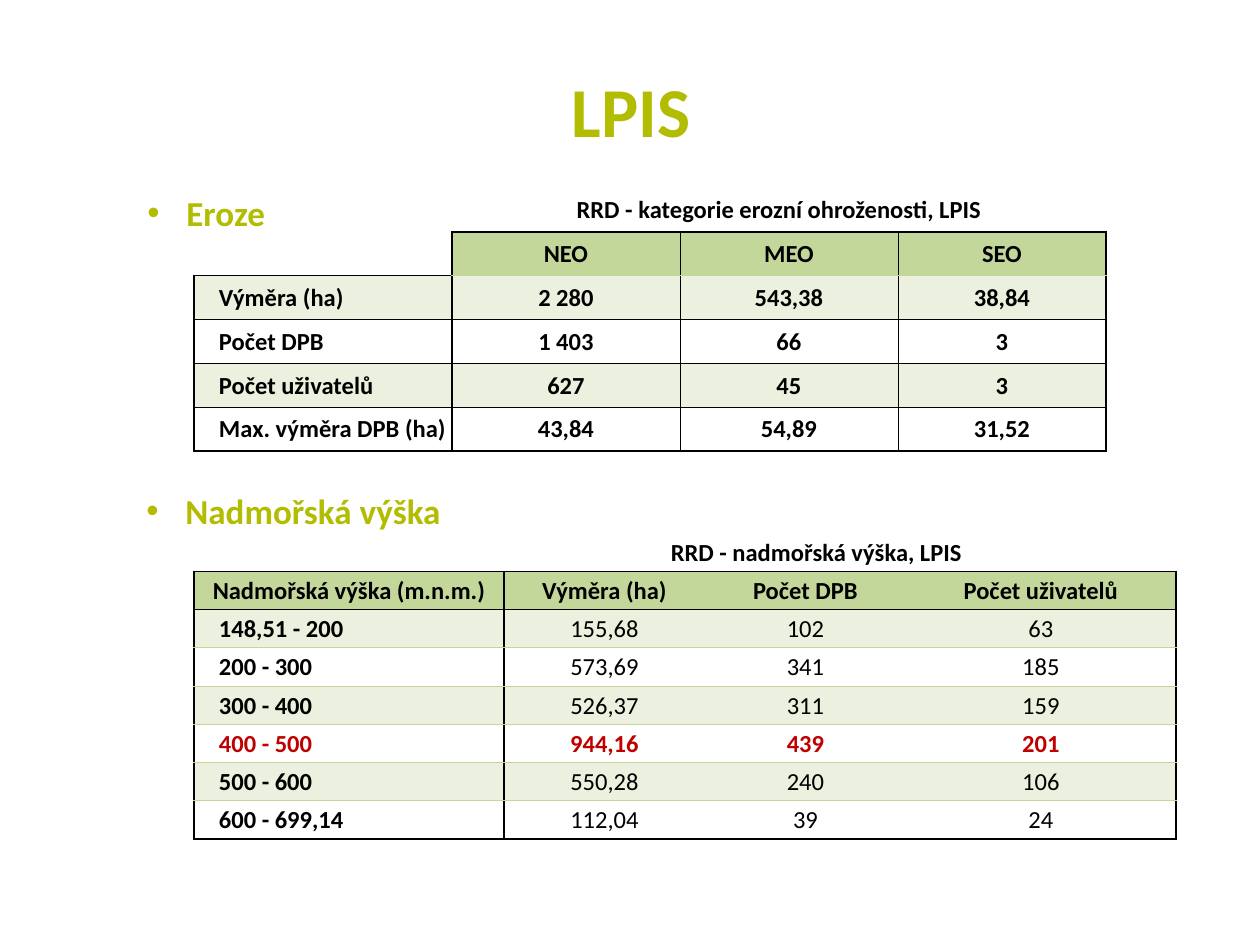
from pptx import Presentation
from pptx.dml.color import RGBColor
from pptx.enum.text import MSO_ANCHOR, MSO_AUTO_SIZE, PP_ALIGN
from pptx.oxml.ns import qn
from pptx.util import Pt
from lxml.etree import SubElement

# Content
TITLE = "LPIS"
HEADS = [("Eroze", (135, 185, 145, 55)), ("Nadmořská výška", (134, 483, 323, 55))]
TABLES = [
    dict(
        box=(194, 188, 263), cols=[258, 228, 218, 208],
        caption="RRD - kategorie erozní ohroženosti, LPIS",
        start=1, shift=1, bold=True, hot=None,
        under="soft", inner="thin", split="thin",
        rows=[
            ["", "NEO", "MEO", "SEO"],
            ["Výměra (ha)", "2 280", "543,38", "38,84"],
            ["Počet DPB", "1 403", "66", "3"],
            ["Počet uživatelů", "627", "45", "3"],
            ["Max. výměra DPB (ha)", "43,84", "54,89", "31,52"],
        ],
    ),
    dict(
        box=(194, 533, 306), cols=[310, 201, 201, 200],
        caption="RRD - nadmořská výška, LPIS",
        start=0, shift=264, bold=False, hot="400 - 500",
        under="thick", inner="soft", split=None,
        rows=[
            ["Nadmořská výška (m.n.m.)", "Výměra (ha)", "Počet DPB", "Počet uživatelů"],
            ["148,51 - 200", "155,68", "102", "63"],
            ["200 - 300", "573,69", "341", "185"],
            ["300 - 400", "526,37", "311", "159"],
            ["400 - 500", "944,16", "439", "201"],
            ["500 - 600", "550,28", "240", "106"],
            ["600 - 699,14", "112,04", "39", "24"],
        ],
    ),
]

# Theme
THEME = dict(
    font="Calibri", lime="B2BC00", black="000000", red="C00000",
    head="C4D79B", band="EBF1DE", title=40, bullet=20, cell=14,
)
LINES = dict(thick=("000000", 1), thin=("000000", 0.5), soft=("C4D79B", 0.5))
INDENT = 39


def px(n):
    return round(n * 914400 / 126)


def put(frame, text, size, color="black", bold=True, align=PP_ALIGN.LEFT, bullet=False):
    para = frame.paragraphs[0]
    para.alignment = align
    if bullet:
        props = para._p.get_or_add_pPr()
        props.set("marL", str(px(INDENT)))
        props.set("indent", str(-px(INDENT)))
        SubElement(props, qn("a:buFont")).set("typeface", "Arial")
        SubElement(props, qn("a:buChar")).set("char", "•")
    run = para.add_run()
    run.text = text
    font = run.font
    font.name, font.size, font.bold = THEME["font"], Pt(THEME[size]), bold
    font.color.rgb = RGBColor.from_string(THEME[color])


def edge(cell, lines):
    props = cell._tc.get_or_add_tcPr()
    for spot, (side, kind) in enumerate(lines.items()):
        line = SubElement(props, qn("a:ln" + side))
        props.insert(spot, line)
        if kind:
            color, width = LINES[kind]
            line.set("w", str(Pt(width)))
            fill = SubElement(line, qn("a:solidFill"))
            SubElement(fill, qn("a:srgbClr")).set("val", color)
        else:
            SubElement(line, qn("a:noFill"))


def level(data, row, col):
    """Line above the given row; row 0 is the caption."""
    last = len(data["rows"]) + 1
    if row == 0 or (row == 1 and not data["rows"][0][col]):
        return None
    if row in (1, last) or (row == 2 and col == 0):
        return "thick"
    return data["under"] if row == 2 else data["inner"]


def upright(data, row, col):
    """Line left of the given column."""
    if row == 0 or (col == 0 and not data["rows"][row - 1][0]):
        return None
    return "thick" if col in (0, 1, len(data["cols"])) else data["split"]


def add_grid(slide, data):
    left, top, high = data["box"]
    cols = data["cols"]
    rows = [[""] * len(cols)] + data["rows"]
    rows[0][data["start"]] = data["caption"]
    table = slide.shapes.add_table(
        len(rows), len(cols), px(left), px(top), px(sum(cols)), px(high)).table
    table.first_row = table.horz_banding = False
    for col, wide in zip(table.columns, cols):
        col.width = px(wide)
    for row in table.rows:
        row.height = px(high / len(rows))

    for r, row in enumerate(rows):
        for c, text in enumerate(row):
            cell = table.cell(r, c)
            label = c == 0 and r > 1
            hot = row[0] == data["hot"]
            cell.vertical_anchor = MSO_ANCHOR.MIDDLE
            cell.margin_left = px(25 if label else data["shift"] if r == 0 else 1)
            cell.margin_right = cell.margin_top = px(1)
            cell.margin_bottom = 0
            tint = "head" if r == 1 else "band" if r and r % 2 == 0 else None
            if tint and text:
                cell.fill.solid()
                cell.fill.fore_color.rgb = RGBColor.from_string(THEME[tint])
            else:
                cell.fill.background()
            put(cell.text_frame, text, "cell", color="red" if hot else "black",
                bold=data["bold"] or r < 2 or c == 0 or hot,
                align=PP_ALIGN.LEFT if label else PP_ALIGN.CENTER)
            edge(cell, dict(
                L=upright(data, r, c), R=upright(data, r, c + 1),
                T=level(data, r, c), B=level(data, r + 1, c)))
    table.cell(0, data["start"]).merge(table.cell(0, len(cols) - 1))


def main():
    deck = Presentation()
    deck.slide_width, deck.slide_height = px(1260), px(945)
    slide = deck.slides.add_slide(deck.slide_layouts[5])

    # Title
    title = slide.shapes.title
    title.left, title.top, title.width, title.height = map(px, (64, 66, 1134, 87))
    title.text_frame.vertical_anchor = MSO_ANCHOR.MIDDLE
    put(title.text_frame, TITLE, "title", color="lime", align=PP_ALIGN.CENTER)

    # Tables
    for data in TABLES:
        add_grid(slide, data)

    # Section headings
    for text, box in HEADS:
        frame = slide.shapes.add_textbox(*map(px, box)).text_frame
        frame.word_wrap = False
        frame.auto_size = MSO_AUTO_SIZE.SHAPE_TO_FIT_TEXT
        put(frame, text, "bullet", color="lime", bullet=True)

    deck.save("out.pptx")


if __name__ == "__main__":
    main()
